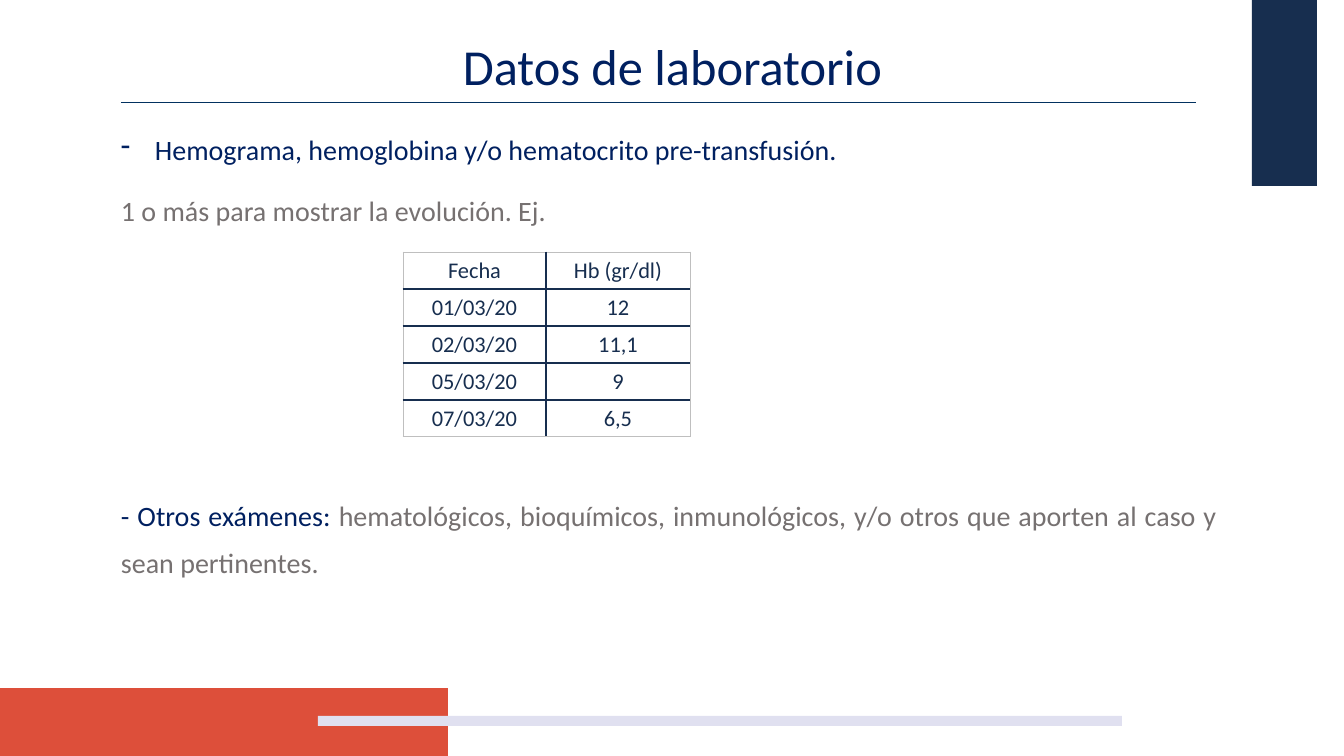
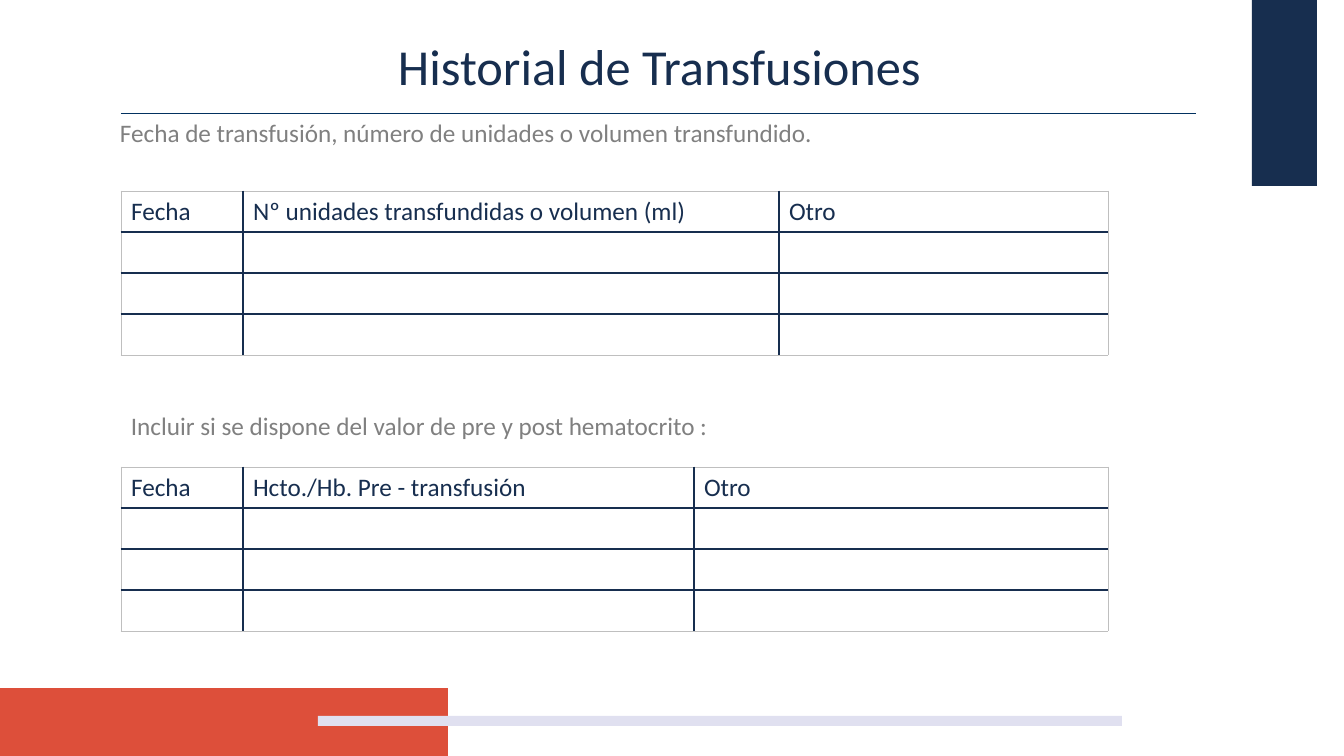
from dataclasses import dataclass

from lxml import etree
from pptx import Presentation
from pptx.dml.color import RGBColor
from pptx.enum.shapes import MSO_CONNECTOR, MSO_SHAPE
from pptx.enum.text import MSO_ANCHOR, PP_ALIGN
from pptx.oxml.ns import qn
from pptx.util import Emu, Pt

# One scale for all lengths: the slide is 1344 x 756 px
SLIDE_W, SLIDE_H = 1344, 756


def px(n):
    return Emu(round(n * 12192000 / SLIDE_W))


@dataclass(frozen=True)
class Theme:
    font: str = "Calibri"
    navy: str = "172E4F"
    blue: str = "002060"
    rule: str = "023160"
    red: str = "DD4F3A"
    lavender: str = "E0E0F0"
    body: str = "767171"
    note: str = "808080"
    edge: str = "BFBFBF"
    title_size: int = 36
    body_size: int = 20
    note_size: int = 18
    cell_size: int = 16


T = Theme()
LEFT = 121
BANDS = [
    (1252, 0, 65, 186, T.navy),
    (0, 688, 448, 68, T.red),
    (318, 716, 804, 10, T.lavender),
]


# Text
def text(p, content, *, size, color, align=PP_ALIGN.LEFT, spacing=None, before=None):
    """Append a formatted run to paragraph p."""
    p.alignment = align
    if spacing is not None:
        p.line_spacing = spacing
    if before is not None:
        p.space_before = Pt(before)
    r = p.add_run()
    r.text = content
    r.font.name = T.font
    r.font.size = Pt(size)
    r.font.color.rgb = RGBColor.from_string(color)


def dash_bullet(p, indent):
    pPr = p._p.get_or_add_pPr()
    pPr.set("marL", str(px(indent)))
    pPr.set("indent", str(-px(indent)))
    etree.SubElement(pPr, qn("a:buChar")).set("char", "-")


def text_box(s, x, y, w, h, anchor=MSO_ANCHOR.TOP):
    tf = s.shapes.add_textbox(px(x), px(y), px(w), px(h)).text_frame
    tf.word_wrap = True
    tf.vertical_anchor = anchor
    return tf


# Shared frame of a slide
def band(s, x, y, w, h, color):
    sp = s.shapes.add_shape(MSO_SHAPE.RECTANGLE, px(x), px(y), px(w), px(h))
    sp.shadow.inherit = False
    sp.fill.solid()
    sp.fill.fore_color.rgb = RGBColor.from_string(color)
    sp.line.fill.background()


def rule(s, y):
    line = s.shapes.add_connector(
        MSO_CONNECTOR.STRAIGHT, px(LEFT), px(y), px(1196), px(y))
    line.line.color.rgb = RGBColor.from_string(T.rule)
    line.line.width = Pt(0.5)
    etree.SubElement(line._element.spPr, qn("a:effectLst"))


def new_slide(prs, title, *, x, w, color, rule_y):
    s = prs.slides.add_slide(prs.slide_layouts[6])
    for spec_row in BANDS:
        band(s, *spec_row)
    tf = text_box(s, x, 0, w, 138, MSO_ANCHOR.MIDDLE)
    text(tf.paragraphs[0], title, size=T.title_size, color=color,
         align=PP_ALIGN.CENTER, spacing=0.9)
    rule(s, rule_y)
    return s


# Tables
def cell_border(cell, side, color, width):
    ln = etree.SubElement(cell._tc.get_or_add_tcPr(), qn(f"a:ln{side}"))
    ln.set("w", str(Pt(width)))
    fill = etree.SubElement(ln, qn("a:solidFill"))
    etree.SubElement(fill, qn("a:srgbClr")).set("val", color)


def table(s, x, y, cols, row_h, rows, *, size, align):
    n_rows, n_cols = len(rows), len(cols)
    tbl = s.shapes.add_table(n_rows, n_cols, px(x), px(y),
                             px(sum(cols)), px(row_h * n_rows)).table
    tbl.first_row = tbl.horz_banding = False
    for col, w in zip(tbl.columns, cols):
        col.width = px(w)
    for i, row in enumerate(rows):
        tbl.rows[i].height = px(row_h)
        for j, value in enumerate(row):
            cell = tbl.cell(i, j)
            outer = {"L": j == 0, "R": j == n_cols - 1,
                     "T": i == 0, "B": i == n_rows - 1}
            for side, is_outer in outer.items():
                cell_border(cell, side, *((T.edge, 0.75) if is_outer else (T.navy, 1)))
            cell.fill.background()
            if value:
                text(cell.text_frame.paragraphs[0], value, size=size,
                     color=T.navy, align=align)


# Slides
def lab_data(prs):
    s = new_slide(prs, "Datos de laboratorio", x=93, w=1159, color=T.blue, rule_y=102)
    tf = text_box(s, 111, 114, 1116, 504)
    body = dict(size=T.body_size, align=PP_ALIGN.JUSTIFY, spacing=1.4)

    p = tf.paragraphs[0]
    dash_bullet(p, 34)
    text(p, "Hemograma, hemoglobina y/o hematocrito pre-transfusión.",
         color=T.blue, **body)
    text(tf.add_paragraph(), "1 o más para mostrar la evolución. Ej.",
         color=T.body, before=10, **body)
    # The wide space before leaves room for the table
    p = tf.add_paragraph()
    text(p, "- Otros exámenes: ", color=T.blue, before=184, **body)
    text(p, "hematológicos, bioquímicos, inmunológicos, y/o otros que aporten "
            "al caso y sean pertinentes.", color=T.body, **body)

    rows = [("Fecha", "Hb (gr/dl)"), ("01/03/20", "12"), ("02/03/20", "11,1"),
            ("05/03/20", "9"), ("07/03/20", "6,5")]
    table(s, 403, 252, [143, 144], 37, rows, size=T.cell_size, align=PP_ALIGN.CENTER)


def transfusion_history(prs):
    s = new_slide(prs, "Historial de Transfusiones", x=166, w=987,
                  color=T.navy, rule_y=113)
    note = dict(size=T.note_size, color=T.note)
    text(text_box(s, 110, 118, 1159, 51).paragraphs[0],
         "Fecha de transfusión, número de unidades o volumen transfundido.",
         spacing=0.8, **note)
    text(text_box(s, LEFT, 405, 672, 40).paragraphs[0],
         "Incluir si se dispone del valor de pre y post hematocrito :", **note)

    forms = [
        (191, [122, 536, 329], "Nº unidades transfundidas o volumen (ml)"),
        (467, [122, 451, 414], "Hcto./Hb. Pre - transfusión"),
    ]
    for y, cols, measure in forms:
        rows = [("Fecha", measure, "Otro")] + [("", "", "")] * 3
        table(s, LEFT, y, cols, 41, rows, size=T.note_size, align=PP_ALIGN.JUSTIFY)


def main():
    prs = Presentation()
    prs.slide_width, prs.slide_height = px(SLIDE_W), px(SLIDE_H)
    lab_data(prs)
    transfusion_history(prs)
    prs.save("out.pptx")


if __name__ == "__main__":
    main()
